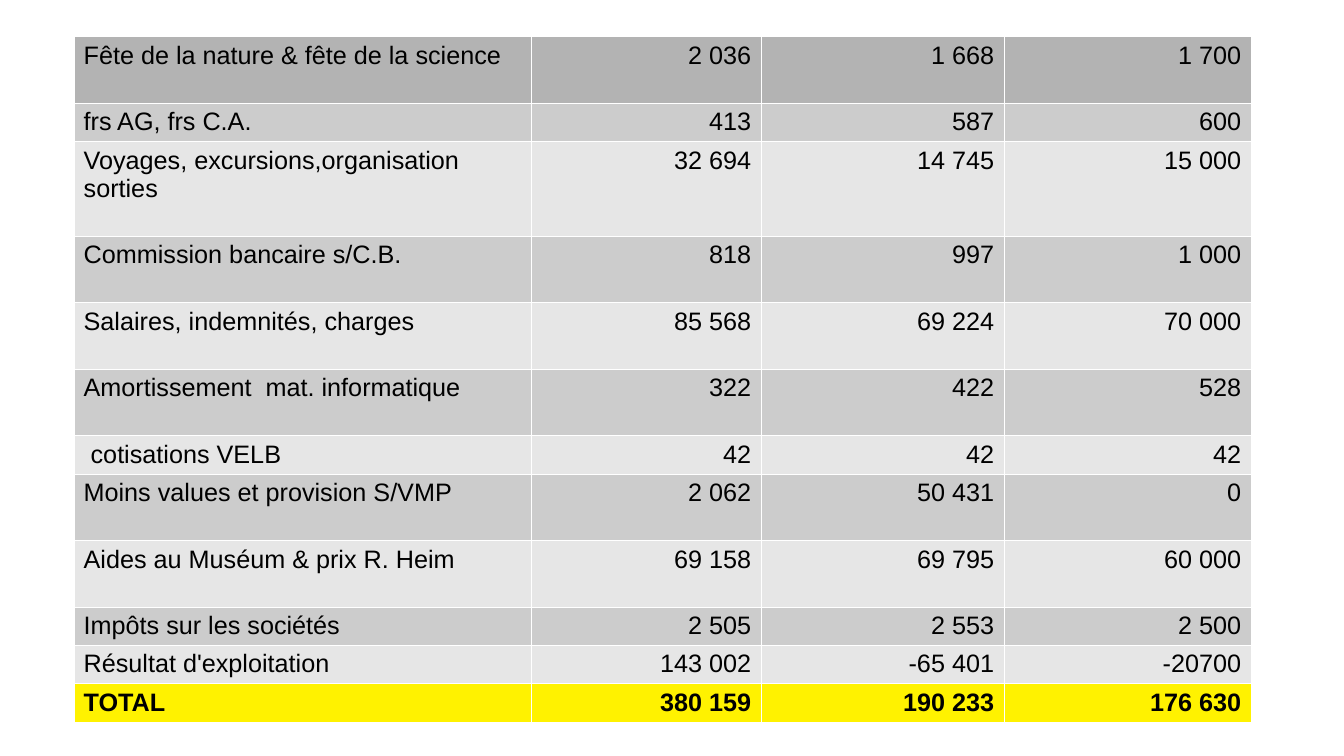
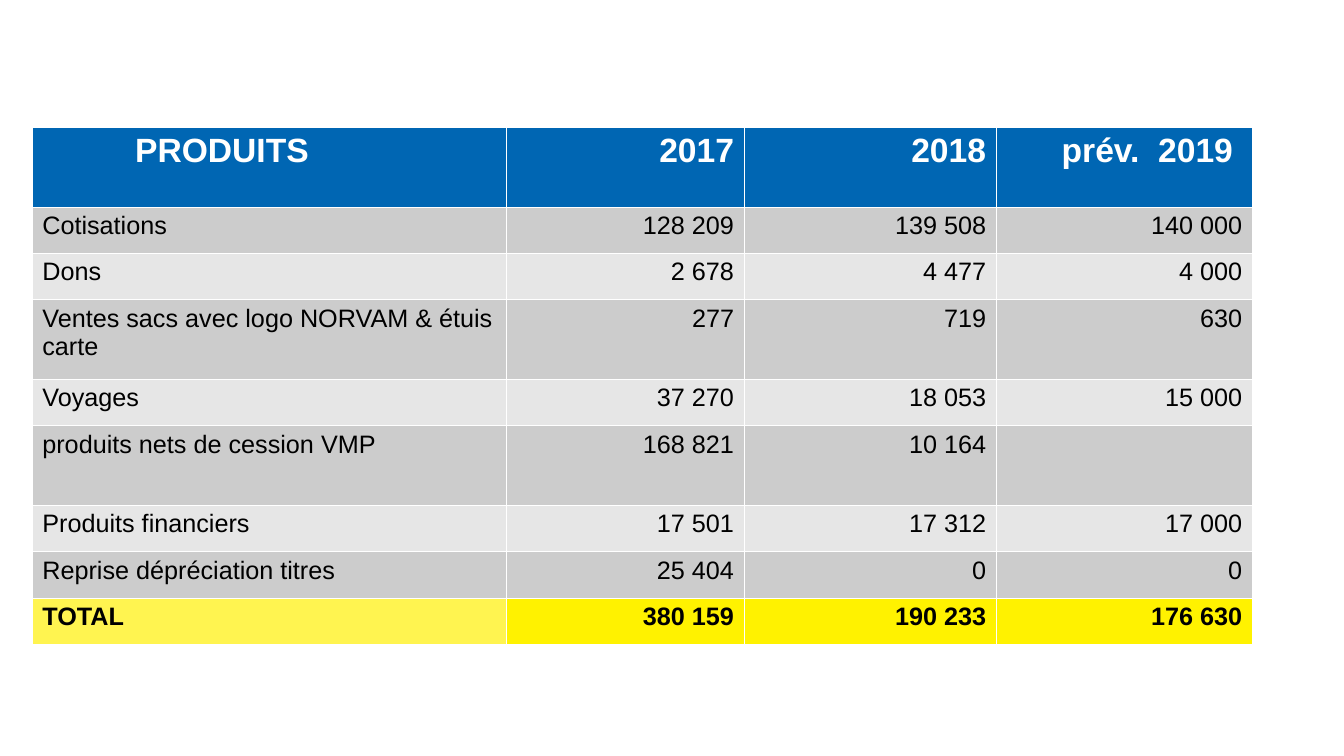
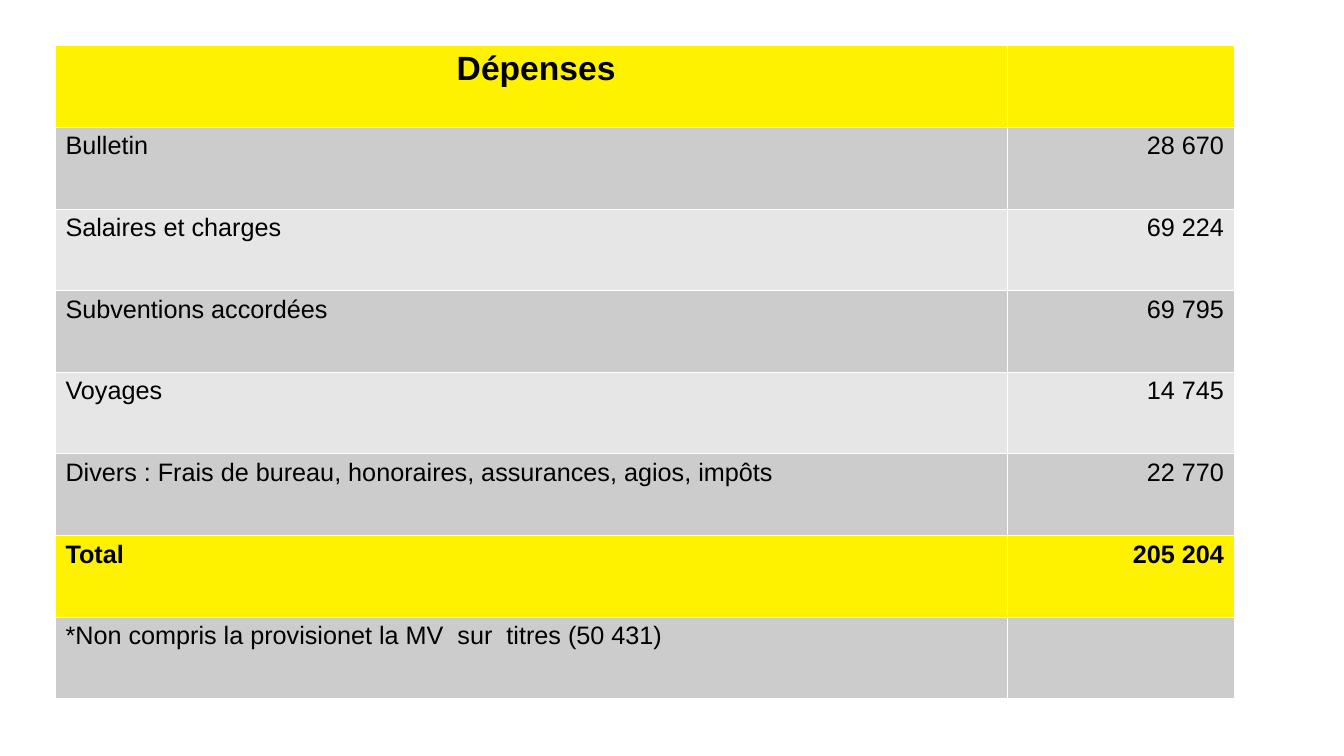
from dataclasses import dataclass

from pptx import Presentation
from pptx import util as u
from pptx.dml.color import RGBColor
from pptx.enum import text
from pptx.oxml import parse_xml
from pptx.oxml.ns import nsdecls


@dataclass(frozen=True)
class Theme:
    font: str = "Arial"
    body: int = 18
    heading: int = 24
    black: str = "000000"
    white: str = "FFFFFF"
    blue: str = "0066B3"
    yellow: str = "FFF200"
    pale_yellow: str = "FFF450"
    grey: str = "B3B3B3"
    bands: tuple = ("E6E6E6", "CCCCCC")
    border: float = 0.06


def amount(value):
    """Group thousands with a no-break space; text passes through, None is empty."""
    if value is None:
        return ""
    return value if isinstance(value, str) else f"{value:,}".replace(",", chr(160))


class Deck:
    def __init__(self, theme):
        self.theme = theme
        self.prs = Presentation()
        self.prs.slide_width = u.Inches(13.33)
        self.prs.slide_height = u.Inches(7.5)
        self.s = None

    def slide(self):
        self.s = self.prs.slides.add_slide(self.prs.slide_layouts[6])

    def table(self, left, top, cols, heights):
        """Add an unstyled table whose cells are filled row by row."""
        frame = self.s.shapes.add_table(
            len(heights), len(cols), u.Inches(left), u.Inches(top),
            u.Inches(sum(cols)), u.Inches(sum(heights)))
        table = frame.table
        table.first_row = table.horz_banding = False
        for column, width in zip(table.columns, cols):
            column.width = u.Inches(width)
        for row, height in zip(table.rows, heights):
            row.height = u.Inches(height)
        return table

    def cell(self, cell, content, fill, color=None, size=None, bold=False,
             right=False, indent=0):
        t = self.theme
        tc_pr = cell._tc.get_or_add_tcPr()
        for side in "LRTB":
            tc_pr.append(parse_xml(
                f'<a:ln{side} {nsdecls("a")} w="{u.Pt(t.border)}"><a:solidFill>'
                f'<a:srgbClr val="{t.white}"/></a:solidFill></a:ln{side}>'))
        cell.fill.solid()
        cell.fill.fore_color.rgb = RGBColor.from_string(fill)
        cell.margin_left = cell.margin_right = u.Inches(0.1)
        cell.margin_top = cell.margin_bottom = u.Inches(0.05)
        p = cell.text_frame.paragraphs[0]
        p.text = content
        p.alignment = text.PP_ALIGN.RIGHT if right else text.PP_ALIGN.LEFT
        if indent:
            p_pr = p._p.get_or_add_pPr()
            p_pr.set("marL", str(u.Inches(indent)))
            p_pr.set("indent", "0")
        for r in p.runs:
            r.font.name = t.font
            r.font.size = u.Pt(size or t.body)
            r.font.bold = bold
            r.font.color.rgb = RGBColor.from_string(color or t.black)

    def heading(self, table, labels, fill, color, indents):
        """Fill the first row; a label listed in indents is left-aligned there."""
        for i, label in enumerate(labels):
            self.cell(table.cell(0, i), label, fill, color, self.theme.heading,
                      bold=True, right=i not in indents, indent=indents.get(i, 0))

    def accounts(self, table, rows, start=1, first_fill=None, total_label_fill=None):
        """Write a label and its amounts per row, banded, with totals in yellow."""
        t = self.theme
        for n, (label, *values) in enumerate(rows, start):
            total = label.upper() == "TOTAL"
            fill = t.yellow if total else t.bands[n % 2]
            if n == 0 and first_fill:
                fill = first_fill
            label_fill = total_label_fill if total and total_label_fill else fill
            self.cell(table.cell(n, 0), label, label_fill, bold=total)
            for i, value in enumerate(values, 1):
                self.cell(table.cell(n, i), amount(value), fill, bold=total, right=True)


CHARGES = [
    ("Fête de la nature & fête de la science", 2036, 1668, 1700),
    ("frs AG, frs C.A.", 413, 587, 600),
    ("Voyages, excursions,organisation sorties", 32694, 14745, 15000),
    ("Commission bancaire s/C.B.", 818, 997, 1000),
    ("Salaires, indemnités, charges", 85568, 69224, 70000),
    ("Amortissement  mat. informatique", 322, 422, 528),
    (" cotisations VELB", 42, 42, 42),
    ("Moins values et provision S/VMP", 2062, 50431, 0),
    ("Aides au Muséum & prix R. Heim", 69158, 69795, 60000),
    ("Impôts sur les sociétés", 2505, 2553, 2500),
    ("Résultat d'exploitation", 143002, -65401, "-20700"),
    ("TOTAL", 380159, 190233, 176630),
]
PRODUITS = [
    ("Cotisations", 128209, 139508, 140000),
    ("Dons", 2678, 4477, 4000),
    ("Ventes sacs avec logo NORVAM & étuis carte", 277, 719, 630),
    ("Voyages", 37270, 18053, 15000),
    ("produits nets de cession VMP", 168821, 10164, None),
    ("Produits financiers", 17501, 17312, 17000),
    ("Reprise dépréciation titres", 25404, 0, 0),
    ("TOTAL", 380159, 190233, 176630),
]
DEPENSES = [
    ("Bulletin", 28670),
    ("Salaires et charges", 69224),
    ("Subventions accordées", 69795),
    ("Voyages", 14745),
    ("Divers : Frais de bureau, honoraires, assurances, agios, impôts", 22770),
    ("Total", 205204),
    ("*Non compris la provisionet la MV  sur  titres (50 431)", None),
]


def charges_slide(deck):
    deck.slide()
    low, mid, high = 0.38, 0.66, 0.94
    heights = [mid, low, high, mid, mid, mid, low, mid, mid, low, low, low]
    table = deck.table(0.73, 0.36, [4.54, 2.28, 2.41, 2.45], heights)
    deck.accounts(table, CHARGES, start=0, first_fill=deck.theme.grey)


def produits_slide(deck):
    t = deck.theme
    deck.slide()
    low, high = 0.46, 0.79
    heights = [high, low, low, high, low, high, low, low, low]
    table = deck.table(0.32, 1.26, [4.7, 2.36, 2.5, 2.54], heights)
    deck.heading(table, ["PRODUITS", "2017", "2018", "prév.  2019"],
                 t.blue, t.white, {0: 0.92, 3: 0.55})
    deck.accounts(table, PRODUITS, total_label_fill=t.pale_yellow)


def depenses_slide(deck):
    t = deck.theme
    deck.slide()
    table = deck.table(0.55, 0.45, [9.44, 2.25], [0.81] * (len(DEPENSES) + 1))
    deck.heading(table, ["Dépenses", ""], t.yellow, t.black, {0: 3.88})
    deck.accounts(table, DEPENSES)


def main():
    deck = Deck(Theme())
    charges_slide(deck)
    produits_slide(deck)
    depenses_slide(deck)
    deck.prs.save("out.pptx")


if __name__ == "__main__":
    main()
